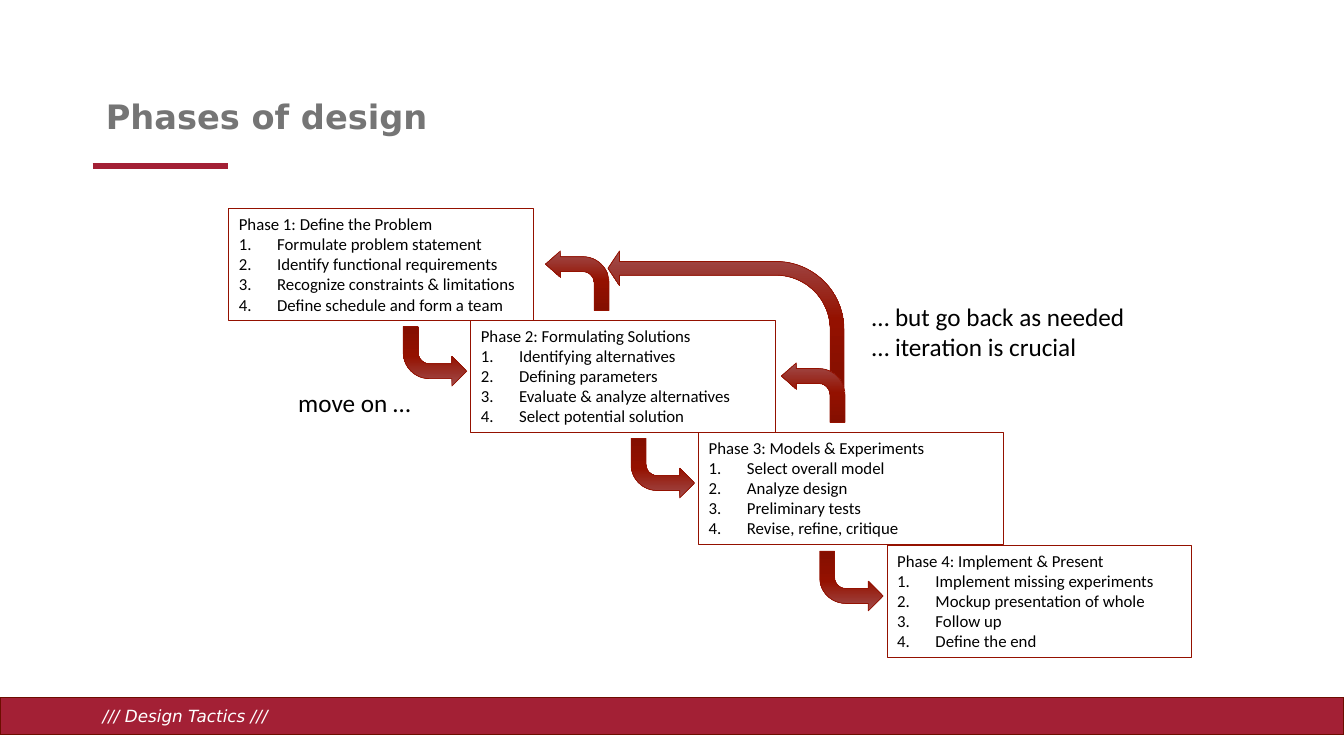
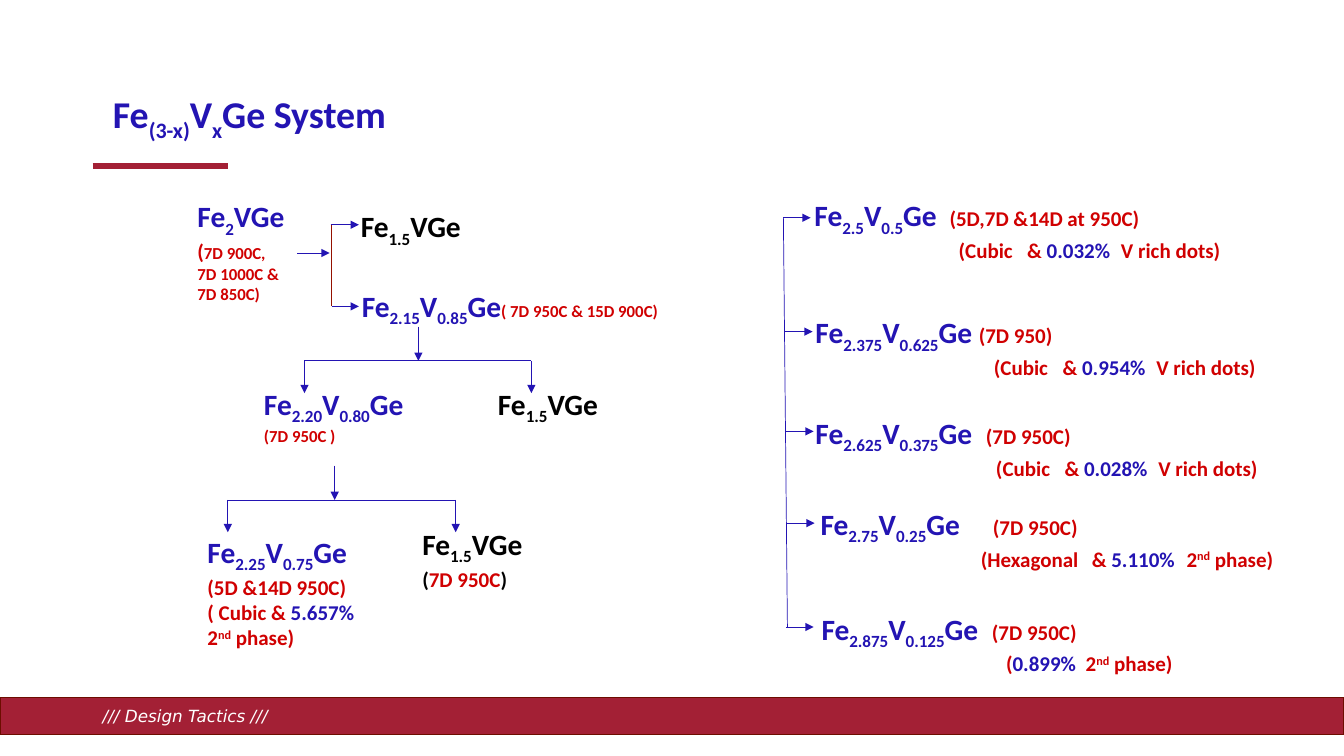
import pptx
import pptx.util
import pptx.dml.color
import pptx.enum.shapes
import pptx.enum.text
import pptx.oxml
import pptx.oxml.ns

RGB = pptx.dml.color.RGBColor
BAND = RGB(0xA3, 0x20, 0x35)
BAND_EDGE = RGB(0x6D, 0x0D, 0x00)
GREY = RGB(0x75, 0x75, 0x75)
BRICK = RGB(0x94, 0x11, 0x00)
BLUE = RGB(0x23, 0x14, 0xB3)
RED = RGB(0xD0, 0x00, 0x01)
BLACK = RGB(0, 0, 0)
WHITE = RGB(0xFF, 0xFF, 0xFF)
ARROW_STOPS = ((0, "A04C4B"), (50, "941100"), (100, "840F00"))

PX = 9144
HEADING, BODY = "DejaVu Sans", "Calibri"
SHAPE = pptx.enum.shapes.MSO_SHAPE

FOOTER = "/// Design Tactics ///"
PHASES = [
    (227, "Phase 1: Define the Problem",
     ["Formulate problem statement", "Identify functional requirements",
      "Recognize constraints & limitations", "Define schedule and form a team"]),
    (467, "Phase 2: Formulating Solutions",
     ["Identifying alternatives", "Defining parameters",
      "Evaluate & analyze alternatives", "Select potential solution"]),
    (693, "Phase 3: Models & Experiments",
     ["Select overall model", "Analyze design", "Preliminary tests", "Revise, refine, critique"]),
    (880, "Phase 4: Implement & Present",
     ["Implement missing experiments", "Mockup presentation of whole",
      "Follow up", "Define the end"]),
]
PHASE_TOP, PHASE_W, PHASE_H = 207, 302, 111
SHORT_BEND = (0.25, 0.221, 0.25, 0.438)
LONG_BEND = (0.101, 0.127, 0.084, 0.499)
BACK_ARROWS = [
    ((541, 249, 63, 59), SHORT_BEND),
    ((603, 249, 234, 135), LONG_BEND),
    ((775, 360, 63, 59), SHORT_BEND),
]
REMARKS = [
    ((286, 379, 160, 40), ["move on …"]),
    ((855, 294, 300, 71), ["… but go back as needed", "… iteration is crucial"]),
]

SYSTEM_TITLE = [[("Fe|(3-x)|V|x|Ge System", 27, BLUE)]]
RESIDUE = ("Fe|1.5|VGe", 21, BLACK)
TREE = [
    ((186, 192, 109, 111), [[("Fe|2|VGe", 21, BLUE)],
                            [("(", 15, RED), ("7D 900C, 7D 1000C & 7D 850C)", 12, RED)]]),
    ((348, 202, 140, 45), [[RESIDUE]]),
    ((349, 281, 350, 45), [[("Fe|2.15|V|0.85|Ge", 21, BLUE), ("( 7D 950C & 15D 900C)", 12, RED)]]),
    ((484, 378, 140, 45), [[RESIDUE]]),
    ((252, 378, 190, 66), [[("Fe|2.20|V|0.80|Ge", 21, BLUE)], [("(7D 950C )", 12, RED)]]),
    ((409, 517, 140, 71), [[RESIDUE],
                           [("(", 15, BLACK), ("7D 950C", 15, RED), (")", 15, BLACK)]]),
    ((196, 525, 190, 121), [[("Fe|2.25|V|0.75|Ge", 21, BLUE)],
                            [("(5D &14D 950C)", 15, RED)],
                            [("( Cubic & ", 15, RED), ("5.657%", 15, BLUE)],
                            [("2|nd| phase)", 15, RED)]]),
]
TREE_LINES = [
    (295, 251, 327, 251, BLUE, True),
    (329, 223, 329, 304, BRICK, False),
    (328, 223, 356, 223, BLUE, True),
    (329, 304, 356, 304, BLUE, True),
]
FORKS = [(415, 324, 302, 527), (332, 462, 226, 452)]
STEM, DROP = 34, 32

CUBIC, DOTS, PHASE = "(Cubic\t& ", "\tV rich dots)", "\t2|nd| phase)"
CUBIC_TABS = (68, 161)
SERIES = [
    (798, 191, 777, 216, "Fe|2.5|V|0.5|Ge", "(5D,7D &14D at 950C)", 942,
     CUBIC, "0.032%", DOTS, 951, CUBIC_TABS),
    (799, 307, 779, 329, "Fe|2.375|V|0.625|Ge", "(7D 950)", 971,
     CUBIC, "0.954%", DOTS, 986, CUBIC_TABS),
    (799, 407, 780, 428, "Fe|2.625|V|0.375|Ge", "(7D 950C)", 978,
     CUBIC, "0.028%", DOTS, 988, CUBIC_TABS),
    (804, 497, 781, 519, "Fe|2.75|V|0.25|Ge", "(7D 950C)", 985,
     "(Hexagonal\t& ", "5.110%", PHASE, 973, (110, 204)),
    (805, 601, 780, 622, "Fe|2.875|V|0.125|Ge", "(7D 950C)", 984,
     "(", "0.899%", PHASE, 998, (79,)),
]
TRUNK = (777, 216, 781, 623, BLUE, False)
SERIES_W, SERIES_H, SERIES_ARROW = 500, 71, 27
INSET = 10


def px(*lengths):
    return [round(n * PX) for n in lengths]


def xml(text):
    return pptx.oxml.parse_xml(text.replace(">", f" {pptx.oxml.ns.nsdecls('a')}>", 1)
                               if "/>" not in text.split(">")[0] + ">"
                               else text.replace("/>", f" {pptx.oxml.ns.nsdecls('a')}/>", 1))


def write(tf, paras, font=BODY, **extra):
    tf.word_wrap = True
    tf.auto_size = pptx.enum.text.MSO_AUTO_SIZE.NONE
    for i, runs in enumerate(paras):
        p = tf.paragraphs[0] if i == 0 else tf.add_paragraph()
        p.alignment = pptx.enum.text.PP_ALIGN.LEFT
        for text, size, color in runs:
            for k, part in enumerate(text.split("|")):
                r = p.add_run()
                r.text = part
                r.font.color.rgb = color
                look = dict(name=font, size=pptx.util.Pt(size), **extra)
                for key, value in look.items():
                    setattr(r.font, key, value)
                if k % 2:
                    base = 30000 if part == "nd" else -25000
                    r._r.get_or_add_rPr().set("baseline", str(base))
    return tf


def add_text(s, box, paras, **look):
    sp = s.shapes.add_textbox(*px(*box))
    write(sp.text_frame, paras, **look)
    return sp


def set_title(s, box, paras, **look):
    title = s.shapes.title
    for key, value in zip(("left", "top", "width", "height"), px(*box)):
        setattr(title, key, value)
    tf = write(title.text_frame, paras, bold=True, **look)
    tf.vertical_anchor = pptx.enum.text.MSO_ANCHOR.MIDDLE
    return tf


def add_line(s, x1, y1, x2, y2, color, arrow=False, weight=0.5):
    c = s.shapes.add_connector(pptx.enum.shapes.MSO_CONNECTOR.STRAIGHT, *px(x1, y1, x2, y2))
    c.line.color.rgb = color
    c.line.width = pptx.util.Pt(weight)
    if arrow:
        c.line._get_or_add_ln().append(xml('<a:tailEnd type="triangle"/>'))
    c._element.spPr.append(xml("<a:effectLst/>"))
    return c


def add_bent_arrow(s, box, rotation=0, bends=()):
    sp = s.shapes.add_shape(SHAPE.BENT_ARROW, *px(*box))
    sp.shadow.inherit = False
    sp.rotation = rotation
    for i, bend in enumerate(bends):
        sp.adjustments[i] = bend
    spPr = sp._element.spPr
    spPr.xfrm.set("flipV", "1")
    stops = "".join(f'<a:gs pos="{pos * 1000}"><a:srgbClr val="{color}"/></a:gs>'
                    for pos, color in ARROW_STOPS)
    spPr.prstGeom.addnext(xml(f'<a:gradFill rotWithShape="1"><a:gsLst>{stops}</a:gsLst>'
                              '<a:lin ang="5400000" scaled="0"/></a:gradFill>'))
    sp.line.color.rgb = BRICK
    sp.line.width = pptx.util.Pt(0.5)


def add_phase(s, x, y, heading, steps):
    sp = add_text(s, (x, y, PHASE_W, PHASE_H), [[(t, 12, BLACK)] for t in [heading] + steps])
    sp.line.color.rgb = BRICK
    sp.line.width = pptx.util.Pt(0.75)
    for p in sp.text_frame.paragraphs[1:]:
        pPr = p._p.get_or_add_pPr()
        indent = px(38)[0]
        pPr.set("marL", str(indent))
        pPr.set("indent", str(-indent))
        pPr.append(xml('<a:buAutoNum type="arabicPeriod"/>'))


def set_tabs(p, stops):
    tabs = "".join(f'<a:tab pos="{n}" algn="l"/>' for n in px(*stops))
    p._p.get_or_add_pPr().append(xml(f"<a:tabLst>{tabs}</a:tabLst>"))


def add_shared_parts(s, layout):
    band = s.shapes.add_shape(SHAPE.RECTANGLE, *px(0, 692, 1333, 37))
    band.shadow.inherit = False
    band.fill.solid()
    band.fill.fore_color.rgb = BAND
    band.line.color.rgb = BAND_EDGE
    band.line.width = pptx.util.Pt(1)
    footer = add_text(s, (92, 695, 605, 30), [[(FOOTER, 12, WHITE)]], font=HEADING, italic=True)
    rule = add_line(s, 92, 165, 226, 165, BAND, weight=4.5)
    for part in (band, footer, rule):
        layout.shapes.element.append(part._element)


def build_phases(s):
    tf = set_title(s, (95, 55, 900, 125), [[("Phases of design", 24, GREY)]], font=HEADING)
    tf.paragraphs[0].line_spacing = 0.9
    for i, (x, heading, steps) in enumerate(PHASES):
        y = PHASE_TOP + i * 334 // 3
        add_phase(s, x, y, heading, steps)
        if i:
            add_bent_arrow(s, (x - 67, y + 6, 63, 59))
    for box, bends in BACK_ARROWS:
        add_bent_arrow(s, box, 180, bends)
    for box, lines in REMARKS:
        add_text(s, box, [[(t, 18, BLACK)] for t in lines])


def build_system(s):
    set_title(s, (102, 88, 320, 56), SYSTEM_TITLE)
    for box, paras in TREE:
        add_text(s, box, paras, bold=True)
    for line in TREE_LINES + [TRUNK]:
        add_line(s, *line)
    for x, y, left, right in FORKS:
        bar = y + STEM
        add_line(s, x, y, x, bar, BLUE, True)
        add_line(s, left, bar, right, bar, BLUE)
        for end in (left, right):
            add_line(s, end, bar, end, bar + DROP, BLUE, True)
    for (x, y, arrow_x, arrow_y, formula, heat, heat_x,
         lattice, share, tail, note_x, gaps) in SERIES:
        sp = add_text(s, (x, y, SERIES_W, SERIES_H), [
            [(formula, 21, BLUE), ("\t" + heat, 15, RED)],
            [("\t" + lattice, 15, RED), (share, 15, BLUE), (tail, 15, RED)],
        ], bold=True)
        first, second = sp.text_frame.paragraphs
        start = note_x - x - INSET
        set_tabs(first, [heat_x - x - INSET])
        set_tabs(second, [start] + [start + gap for gap in gaps])
        add_line(s, arrow_x, arrow_y, arrow_x + SERIES_ARROW, arrow_y, BLUE, True)


def main():
    prs = pptx.Presentation()
    prs.slide_width, prs.slide_height = px(1333, 750)
    layout = prs.slide_layouts[5]
    slides = [prs.slides.add_slide(layout) for _ in range(2)]
    add_shared_parts(slides[0], layout)
    for s, build in zip(slides, (build_phases, build_system)):
        build(s)
    prs.save("out.pptx")


if __name__ == "__main__":
    main()
